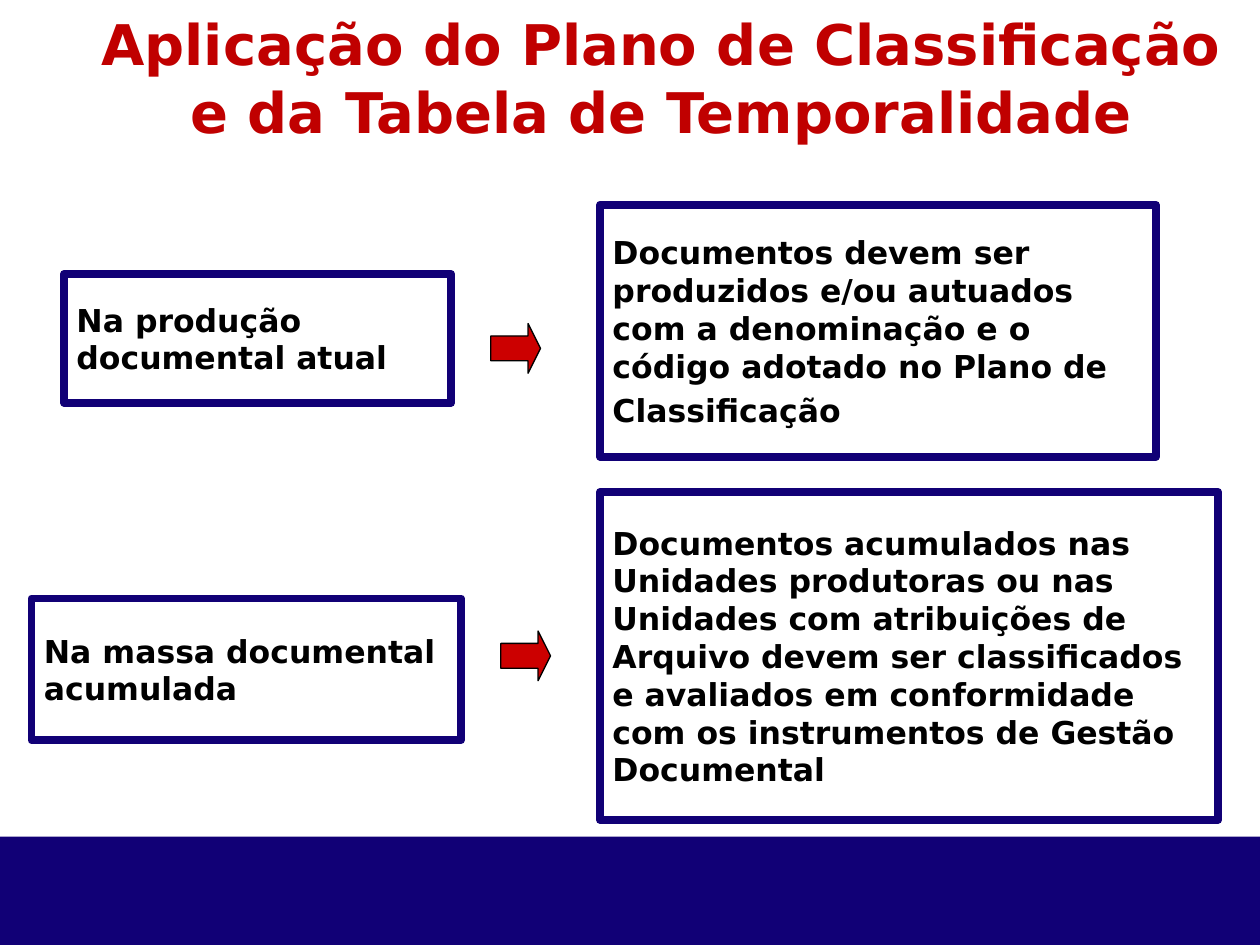
from dataclasses import dataclass

from pptx import Presentation
from pptx.dml.color import RGBColor
from pptx.enum.shapes import MSO_SHAPE
from pptx.enum.text import MSO_ANCHOR, PP_ALIGN
from pptx.util import Pt

RECTANGLE = MSO_SHAPE.RECTANGLE
RIGHT_ARROW = MSO_SHAPE.RIGHT_ARROW
MIDDLE = MSO_ANCHOR.MIDDLE
LEFT = PP_ALIGN.LEFT
CENTER = PP_ALIGN.CENTER


@dataclass(frozen=True)
class Theme:
    font: str = "DejaVu Sans"
    navy: RGBColor = RGBColor(0x11, 0x00, 0x76)
    title: RGBColor = RGBColor(0xC0, 0x00, 0x00)
    arrow: RGBColor = RGBColor(0xCC, 0x00, 0x00)
    black: RGBColor = RGBColor(0x00, 0x00, 0x00)
    title_size: int = 32
    body_size: int = 18


theme = Theme()


def add_plain_shape(kind, bounds, fill=None, line=None, line_width=0):
    shape = slide.shapes.add_shape(kind, *map(Pt, bounds))
    shape.shadow.inherit = False
    if fill is None:
        shape.fill.background()
    else:
        shape.fill.solid()
        shape.fill.fore_color.rgb = fill
    if line is None:
        shape.line.fill.background()
    else:
        shape.line.color.rgb = line
        shape.line.width = Pt(line_width)
    return shape


def write(paragraph, text, size, color, alignment):
    paragraph.text = text
    paragraph.alignment = alignment
    paragraph.font.name = theme.font
    paragraph.font.size = Pt(size)
    paragraph.font.bold = True
    paragraph.font.color.rgb = color


presentation = Presentation()
presentation.slide_width = Pt(720)
presentation.slide_height = Pt(540)
slide = presentation.slides.add_slide(presentation.slide_layouts[6])

add_plain_shape(RECTANGLE, (0, 478.08, 720, 61.92), fill=theme.navy)

title_box = slide.shapes.add_textbox(Pt(0), Pt(2.16), Pt(720), Pt(85))
title_frame = title_box.text_frame
title_frame.word_wrap = True
title_frame.margin_left = Pt(43.2)
write(
    title_frame.paragraphs[0],
    "Aplicação do Plano de Classificação e da Tabela de Temporalidade",
    theme.title_size,
    theme.title,
    CENTER,
)

boxes = [
    ((36.6, 156.6, 221.2, 73.6), ["Na produção documental atual"]),
    (
        (342.9, 117, 317.5, 144),
        [
            "Documentos devem ser produzidos e/ou autuados com a denominação "
            "e o código adotado no Plano de",
            "Classificação",
        ],
    ),
    ((18, 342, 245.5, 81), ["Na massa documental acumulada"]),
    (
        (342.9, 281.2, 353.2, 187.3),
        [
            "Documentos acumulados nas Unidades produtoras ou nas Unidades com "
            "atribuições de Arquivo devem ser classificados e avaliados em "
            "conformidade com os instrumentos de Gestão Documental",
        ],
    ),
]
for bounds, texts in boxes:
    box = add_plain_shape(RECTANGLE, bounds, line=theme.navy, line_width=4.5)
    frame = box.text_frame
    frame.word_wrap = True
    frame.vertical_anchor = MIDDLE
    for index, text in enumerate(texts):
        paragraph = frame.add_paragraph() if index else frame.paragraphs[0]
        write(paragraph, text, theme.body_size, theme.black, LEFT)
        paragraph.space_before = Pt(3.6)

for left, top in [(280.5, 184.9), (286.2, 360.6)]:
    arrow = add_plain_shape(
        RIGHT_ARROW, (left, top, 28.4, 28.4), theme.arrow, theme.black, 0.75
    )
    arrow.adjustments[0] = 0.5
    arrow.adjustments[1] = 0.25

presentation.save("out.pptx")
